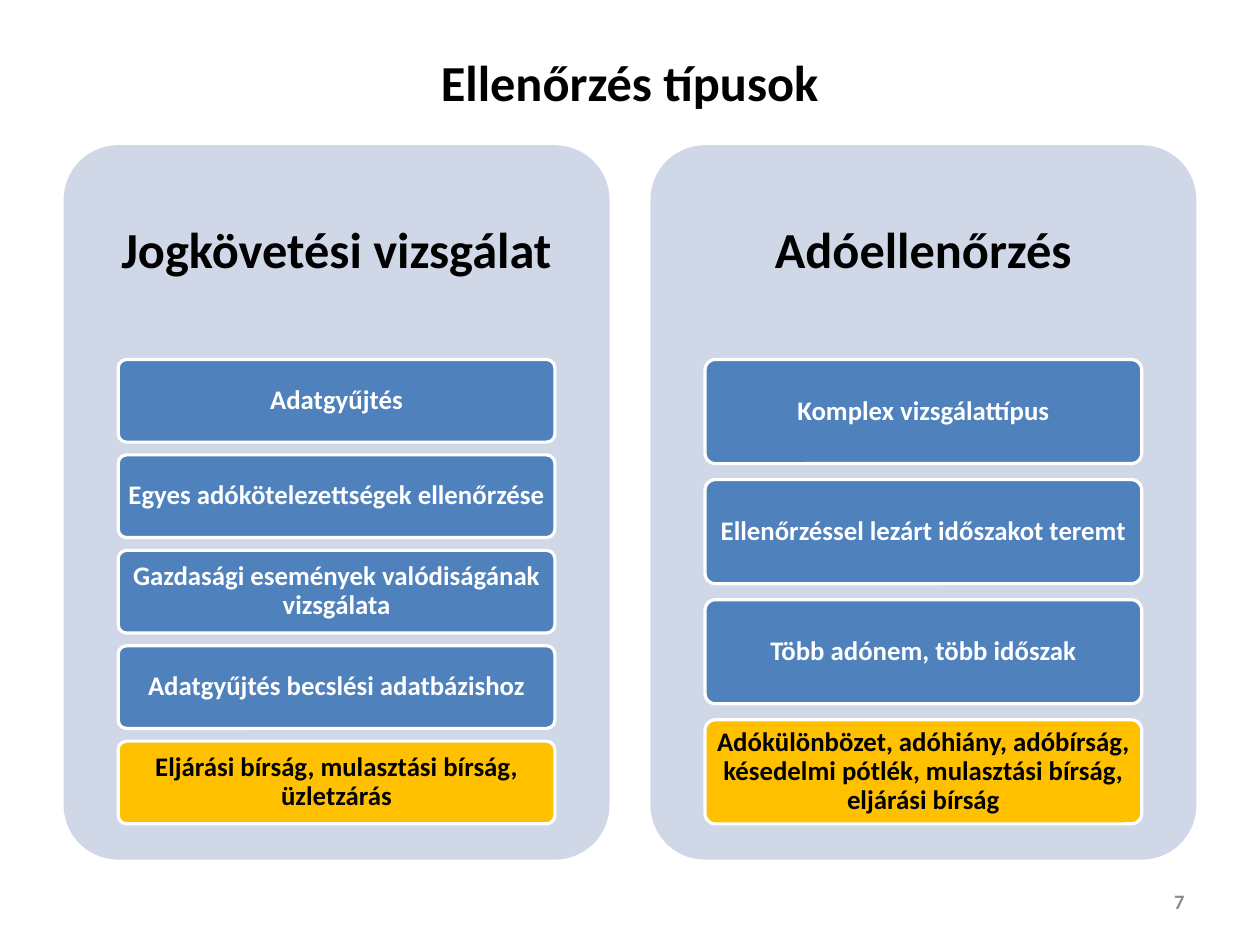
from dataclasses import dataclass

from pptx import Presentation
from pptx.dml.color import RGBColor
from pptx.enum.shapes import MSO_SHAPE
from pptx.enum.text import MSO_ANCHOR, PP_ALIGN
from pptx.util import Pt

ROUNDED = MSO_SHAPE.ROUNDED_RECTANGLE
MIDDLE = MSO_ANCHOR.MIDDLE
CENTER, RIGHT = PP_ALIGN.CENTER, PP_ALIGN.RIGHT


@dataclass(frozen=True)
class Theme:
    font: str = "Calibri"
    heading_size: int = 32
    card_size: int = 17
    number_size: int = 13
    dark: str = "000000"
    light: str = "FFFFFF"
    muted: str = "8C8C8C"
    panel: str = "D0D8E8"
    card: str = "4F81BD"
    sanction: str = "FFC000"


class PageBuilder:
    def __init__(self, page, theme):
        self.page = page
        self.theme = theme

    def set_text(self, box, text, size, color, margins, align=CENTER, spacing=1.0):
        frame = box.text_frame
        frame.word_wrap = True
        frame.vertical_anchor = MIDDLE
        frame.margin_left = frame.margin_right = Pt(margins[0])
        frame.margin_top = frame.margin_bottom = Pt(margins[1])
        para = frame.paragraphs[0]
        para.text = text
        para.alignment = align
        para.line_spacing = spacing
        para.font.name = self.theme.font
        para.font.size = Pt(size)
        para.font.bold = True
        para.font.color.rgb = RGBColor.from_string(color)

    def title(self, text, left, top, width, height):
        box = self.page.shapes.title
        box.left, box.top, box.width, box.height = map(Pt, (left, top, width, height))
        self.set_text(box, text, self.theme.heading_size, self.theme.dark, (8, 4))

    def label(self, text, bounds, size, color, margins, **layout):
        box = self.page.shapes.add_textbox(*map(Pt, bounds))
        self.set_text(box, text, size, color, margins, **layout)

    def rounded(self, bounds, fill):
        box = self.page.shapes.add_shape(ROUNDED, *map(Pt, bounds))
        box.adjustments[0] = 0.1
        box.shadow.inherit = False
        box.fill.solid()
        box.fill.fore_color.rgb = RGBColor.from_string(fill)
        box.line.fill.background()
        return box

    def card(self, text, bounds, fill, color):
        box = self.rounded(bounds, fill)
        box.line.color.rgb = RGBColor.from_string(self.theme.light)
        box.line.width = Pt(2)
        self.set_text(box, text, self.theme.card_size, color, (3.4, 2.6), spacing=0.9)

    def panel(self, heading, texts, left, top, width, height):
        theme = self.theme
        self.rounded((left, top, width, height), theme.panel)
        self.label(heading, (left, top, width, height * 0.3), theme.heading_size,
                   theme.dark, (9.6, 9.6), spacing=0.9)
        gap_share = 2 / 13
        count = len(texts)
        card_height = height * 0.65 / (count + (count - 1) * gap_share)
        pitch = card_height * (1 + gap_share)
        for index, text in enumerate(texts):
            bounds = (left + width * 0.1, top + height * 0.3 + index * pitch,
                      width * 0.8, card_height)
            is_sanction = index == count - 1
            fill = theme.sanction if is_sanction else theme.card
            color = theme.dark if is_sanction else theme.light
            self.card(text, bounds, fill, color)


AUDIT_TYPES = {
    "Jogkövetési vizsgálat": [
        "Adatgyűjtés",
        "Egyes adókötelezettségek ellenőrzése",
        "Gazdasági események valódiságának vizsgálata",
        "Adatgyűjtés becslési adatbázishoz",
        "Eljárási bírság, mulasztási bírság, üzletzárás",
    ],
    "Adóellenőrzés": [
        "Komplex vizsgálattípus",
        "Ellenőrzéssel lezárt időszakot teremt",
        "Több adónem, több időszak",
        "Adókülönbözet, adóhiány, adóbírság, késedelmi pótlék, "
        "mulasztási bírság, eljárási bírság",
    ],
}


def main():
    deck = Presentation()
    deck.slide_width, deck.slide_height = Pt(800), Pt(600)
    page = deck.slides.add_slide(deck.slide_layouts[5])
    theme = Theme()
    builder = PageBuilder(page, theme)

    builder.title("Ellenőrzés típusok", 40, 24, 720, 55.5)
    panel_width = 346.6
    for column, (heading, texts) in enumerate(AUDIT_TYPES.items()):
        left = 40.4 + column * panel_width * 1.075
        builder.panel(heading, texts, left, 92.2, panel_width, 453.6)
    builder.label("7", (573.3, 556, 186.7, 32), theme.number_size, theme.muted,
                  (8, 4), align=RIGHT)

    deck.save("out.pptx")


if __name__ == "__main__":
    main()
